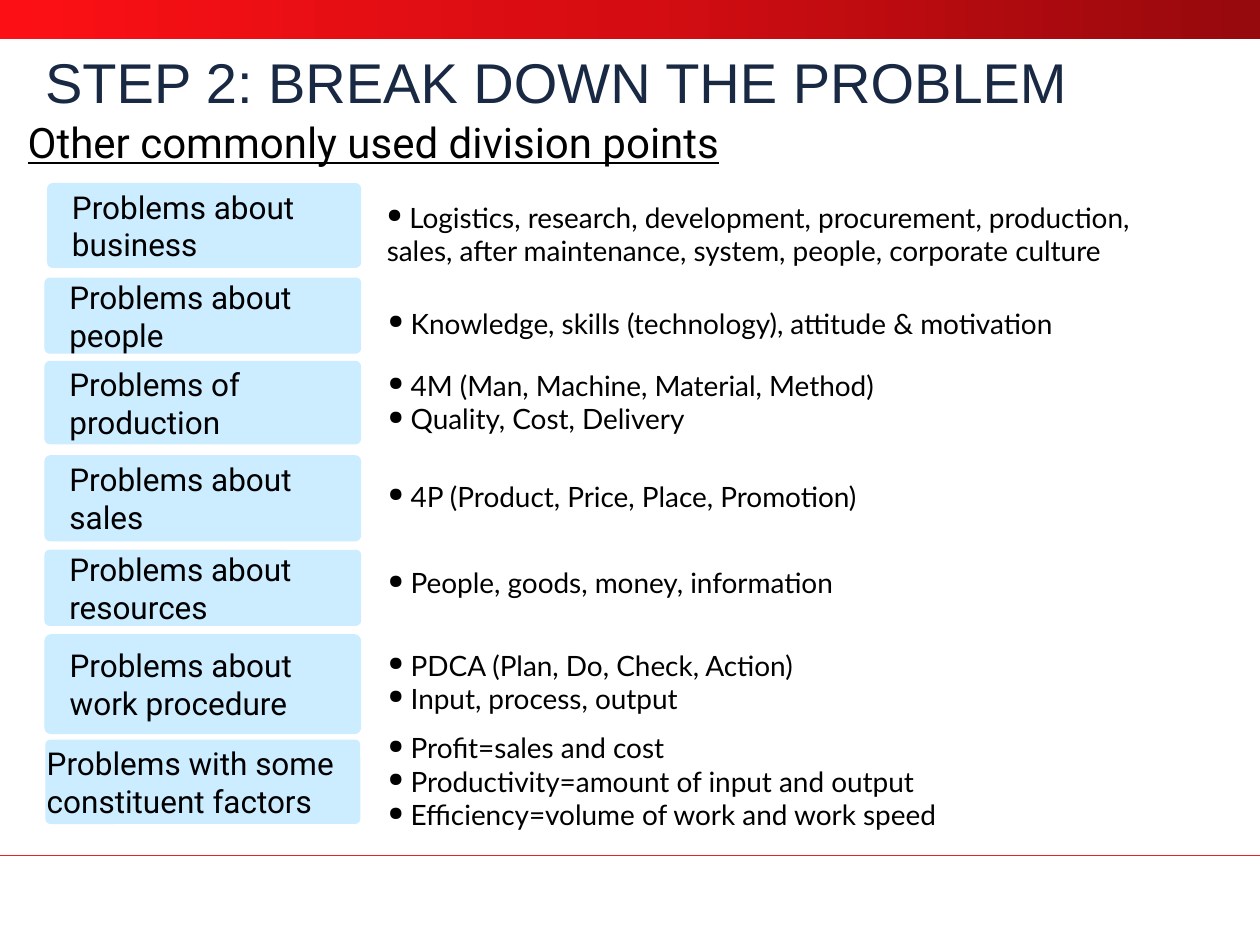
from lxml import etree
from pptx import Presentation
from pptx.dml.color import RGBColor
from pptx.enum.shapes import MSO_CONNECTOR, MSO_SHAPE
from pptx.enum.text import MSO_ANCHOR as ANCHOR
from pptx.oxml import parse_xml
from pptx.oxml.ns import nsdecls, qn
from pptx.util import Inches, Pt

rgb = RGBColor.from_string
COLS, ROWS = 100, 75
BLUE = "CCECFF"

prs = Presentation()
prs.slide_width, prs.slide_height = Inches(10), Inches(7.5)
s = prs.slides.add_slide(prs.slide_layouts[6])


def grid(left, top, width, height):
    """Turn columns and rows of the slide grid into lengths."""
    col, row = prs.slide_width / COLS, prs.slide_height / ROWS
    return round(left * col), round(top * row), round(width * col), round(height * row)


def write(sp, text, size=16, font="Lato", color="000000", inset=0.22,
          anchor=ANCHOR.MIDDLE, underline=None, spacing=None, bullet=False,
          hang=0, tab=None):
    """Fill a shape with one paragraph per line of text."""
    tf = sp.text_frame
    tf.word_wrap = True
    tf.vertical_anchor = anchor
    tf.margin_left = tf.margin_right = Inches(inset)
    tf.margin_top = tf.margin_bottom = Inches(0.05)
    for i, line in enumerate(text.split("\n")):
        p = tf.add_paragraph() if i else tf.paragraphs[0]
        pPr = p._p.get_or_add_pPr()
        pPr.set("algn", "l")
        if spacing:
            p.line_spacing = Pt(spacing)
        if bullet:
            pPr.set("marL", str(Inches(hang)))
            pPr.set("indent", str(-Inches(hang)))
            etree.SubElement(pPr, qn("a:buSzPct")).set("val", "70000")
            etree.SubElement(pPr, qn("a:buChar")).set("char", "●")
        if tab:
            stop = etree.SubElement(etree.SubElement(pPr, qn("a:tabLst")), qn("a:tab"))
            stop.set("pos", str(Inches(tab)))
            stop.set("algn", "l")
        r = p.add_run()
        r.text = line
        r.font.size, r.font.name = Pt(size), font
        r.font.color.rgb = rgb(color)
        r.font.underline = underline


# Top band, bright to dark red
band = s.shapes.add_shape(MSO_SHAPE.RECTANGLE, *grid(0, 0, COLS, 3.1))
band.shadow.inherit = False
band.line.fill.background()
stops = "".join(f'<a:gs pos="{pos}"><a:srgbClr val="{rgb(color)}"/></a:gs>'
                for pos, color in ((0, "FC1015"), (50000, "D50D12"), (100000, "96090D")))
band.fill.background()
no_fill = band._element.spPr.find(qn("a:noFill"))
no_fill.getparent().replace(no_fill, parse_xml(
    f'<a:gradFill {nsdecls("a")} rotWithShape="1"><a:gsLst>{stops}</a:gsLst>'
    '<a:lin ang="0" scaled="0"/></a:gradFill>'))

# Footer rule
left, top, width, _ = grid(0, 67.9, COLS, 0)
rule = s.shapes.add_connector(MSO_CONNECTOR.STRAIGHT, left, top, width, top)
rule.line.color.rgb = rgb("ED1F24")
rule.line.width = Pt(1)
etree.SubElement(rule._element.spPr, qn("a:effectLst"))

# Title and subtitle
write(s.shapes.add_textbox(*grid(2.6, 3.6, 91.9, 6.7)), "STEP 2: BREAK DOWN THE PROBLEM",
      size=32, font="Arial", color="192943", inset=0.1, anchor=ANCHOR.TOP, spacing=36)
write(s.shapes.add_textbox(*grid(0, 8.3, 103, 5.9)), "Other commonly used division points",
      size=24, font="Roboto", underline=True)

# Problem types: label, its top and height, points, their top and height, extra format
problems = [
    ("Problems about business", 14.6, 6.6,
     " Logistics, research, development, procurement, production, \tsales, "
     "after maintenance, system, people, corporate culture", 14.1, 8.9, {"tab": 0.19}),
    ("Problems about people", 22.1, 5.9,
     " Knowledge, skills (technology), attitude & motivation", 23.1, 5.1, {}),
    ("Problems of production", 28.7, 6.5,
     " 4M (Man, Machine, Material, Method)\n Quality, Cost, Delivery",
     27.2, 9.4, {"hang": 0.1}),
    ("Problems about sales", 36.2, 6.7,
     " 4P (Product, Price, Place, Promotion)", 34.7, 9.4, {"hang": 0.1}),
    ("Problems about resources", 43.7, 5.9,
     " People, goods, money, information", 43.7, 5.1, {}),
    ("Problems about work procedure", 50.4, 7.8,
     " PDCA (Plan, Do, Check, Action)\n Input, process, output", 50.4, 7.4, {}),
    ("Problems with some constituent factors", 58.7, 6.7,
     " Profit=sales and cost\n Productivity=amount of input and output\n"
     " Efficiency=volume of work and work speed", 58.9, 6.2, {}),
]
LABEL_RIGHT = 28.6
for i, (label, top, height, points, points_top, points_height, extra) in enumerate(problems):
    first, last = i == 0, i == len(problems) - 1
    left = 3.8 if first else 3.6
    sp = s.shapes.add_shape(MSO_SHAPE.ROUNDED_RECTANGLE,
                            *grid(left, top, LABEL_RIGHT - left, height))
    sp.adjustments[0] = 0.06
    sp.shadow.inherit = False
    sp.fill.solid()
    sp.fill.fore_color.rgb = rgb(BLUE)
    if last:
        sp.line.fill.background()
    else:
        sp.line.color.rgb = rgb(BLUE)
        sp.line.width = Pt(1)
    write(sp, label, size=18, font="Roboto", inset=0 if last else 0.18)

    points_left = LABEL_RIGHT - 0.1 if first else LABEL_RIGHT
    box = s.shapes.add_textbox(*grid(points_left, points_top, 69.6 if first else 70.8,
                                     points_height))
    write(box, points, bullet=True, **extra)

prs.save("out.pptx")
